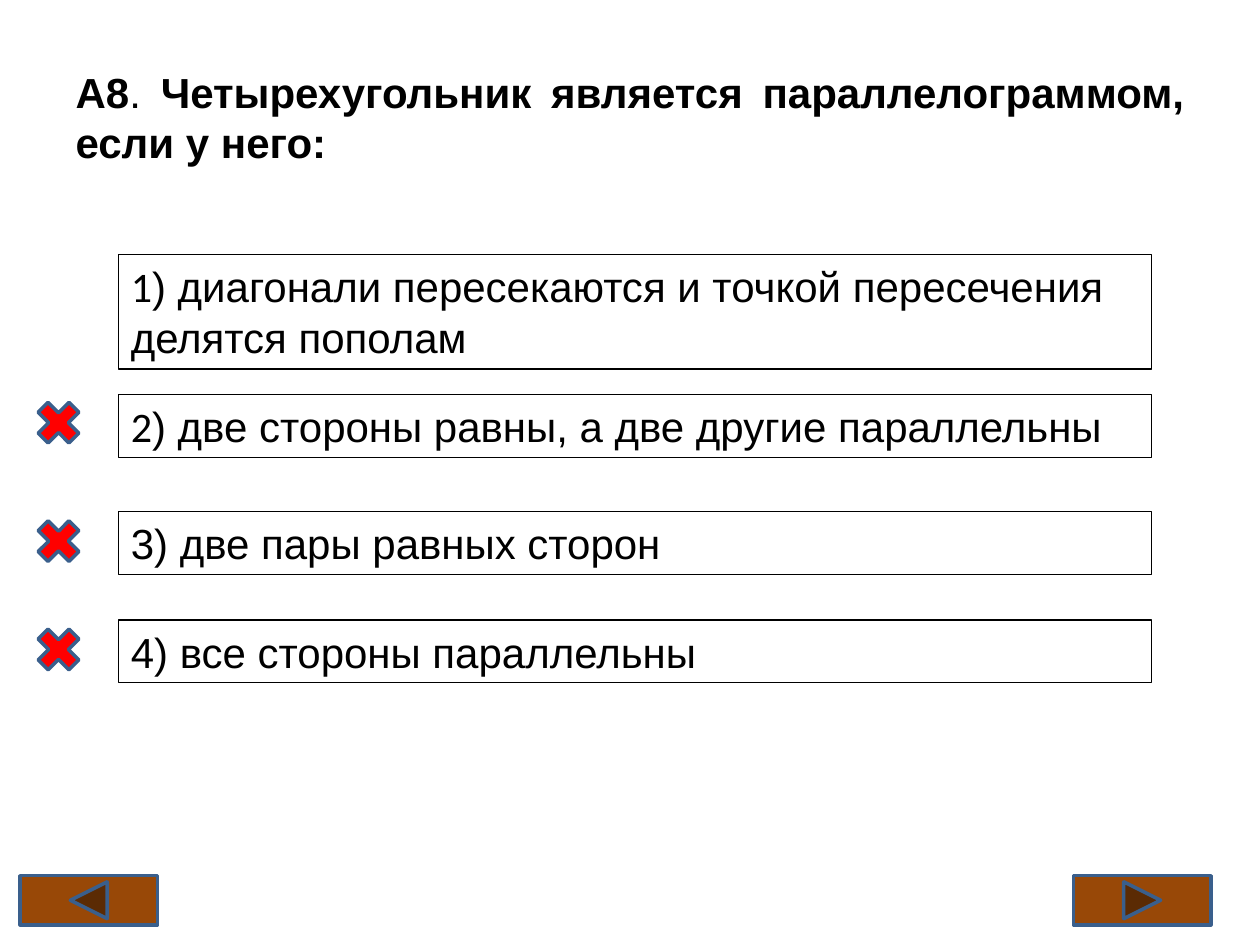
from pptx import Presentation
from pptx.dml.color import RGBColor
from pptx.enum import shapes, text
from pptx.util import Inches, Pt

COLORS = {"ink": "000000", "cross": "FF0000", "button": "984807", "edge": "3A5F8C"}
FRAME = {
    "word_wrap": True,
    "vertical_anchor": text.MSO_ANCHOR.TOP,
    "auto_size": text.MSO_AUTO_SIZE.SHAPE_TO_FIT_TEXT,
}
SHAPE = shapes.MSO_SHAPE


def add_runs(p, runs):
    for words, font, bold in runs:
        r = p.add_run()
        r.text = words
        style = {"name": font, "size": Pt(24), "bold": bold}
        for key, value in style.items():
            setattr(r.font, key, value)
        r.font.color.rgb = RGBColor.from_string(COLORS["ink"])


def add_box(kind, box, fill, line, weight):
    sp = s.shapes.add_shape(kind, *map(Inches, box))
    sp.shadow.inherit = False
    if fill:
        sp.fill.solid()
        sp.fill.fore_color.rgb = RGBColor.from_string(COLORS[fill])
    else:
        sp.fill.background()
    sp.line.color.rgb = RGBColor.from_string(COLORS[line])
    sp.line.width = Pt(weight)
    return sp


prs = Presentation()
prs.slide_width, prs.slide_height = Inches(10), Inches(7.5)
s = prs.slides.add_slide(prs.slide_layouts[5])

title = s.shapes.title
place = {"left": 0.5, "top": 0.3, "width": 9, "height": 1.25}
for key, value in place.items():
    setattr(title, key, Inches(value))
tf = title.text_frame
tf.word_wrap = True
tf.vertical_anchor = text.MSO_ANCHOR.MIDDLE
p = tf.paragraphs[0]
p.alignment = text.PP_ALIGN.JUSTIFY
add_runs(p, [
    ("А8", "Arial", True),
    (". ", "Arial", False),
    ("Четырехугольник является параллелограммом, если у него:", "Arial", True),
])

answers = [
    (2.02, 0.91, None, [
        ("1", "Calibri", False),
        (") диагонали пересекаются и точкой пересечения делятся пополам", "Arial", False),
    ]),
    (3.13, 0.5, 3.12, [
        ("2", "Calibri", False),
        (") две стороны равны, а две другие параллельны", "Arial", False),
    ]),
    (4.06, 0.5, 4.06, [("3) две пары равных сторон", "Arial", False)]),
    (4.92, 0.5, 4.92, [("4) все стороны параллельны", "Arial", False)]),
]
for top, height, cross_top, runs in answers:
    sp = add_box(SHAPE.RECTANGLE, (0.94, top, 8.2, height), None, "ink", 0.75)
    tf = sp.text_frame
    for key, value in FRAME.items():
        setattr(tf, key, value)
    p = tf.paragraphs[0]
    p.alignment = text.PP_ALIGN.LEFT
    add_runs(p, runs)
    if cross_top:
        add_box(SHAPE.MATH_MULTIPLY, (0.23, cross_top, 0.47, 0.47), "cross", "edge", 2)

buttons = [
    (SHAPE.ACTION_BUTTON_FORWARD_OR_NEXT, 8.52),
    (SHAPE.ACTION_BUTTON_BACK_OR_PREVIOUS, 0.16),
]
for kind, left in buttons:
    add_box(kind, (left, 6.95, 1.09, 0.39), "button", "edge", 2)

prs.save("out.pptx")
